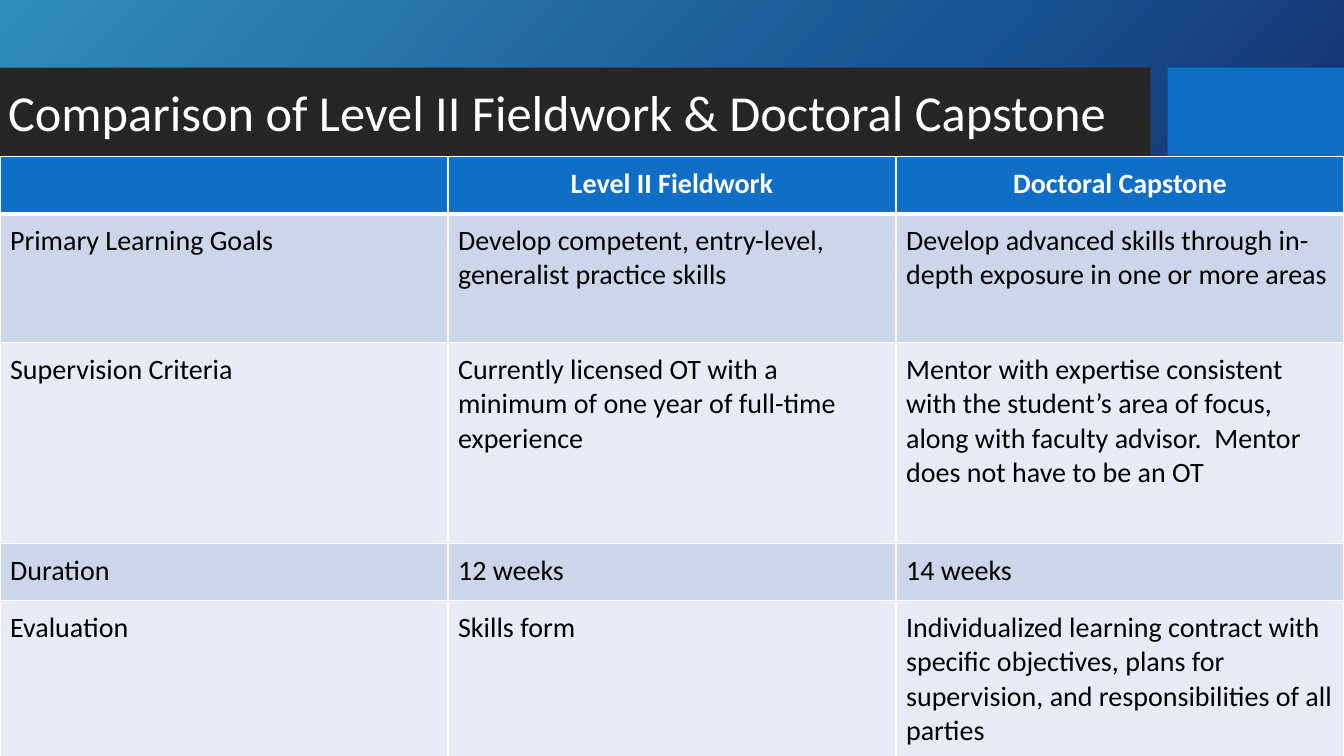
from copy import deepcopy

from lxml import etree
from pptx import Presentation
from pptx import util as u
from pptx.dml.color import RGBColor
from pptx.enum import shapes, text
from pptx.oxml import ns

WIDTH, HEIGHT = u.Inches(13.33), u.Inches(7.5)
FONT = "Calibri"
WHITE = RGBColor(0xFF, 0xFF, 0xFF)
BLACK = RGBColor(0, 0, 0)
CHARCOAL = RGBColor(0x26, 0x26, 0x26)
BLUE = RGBColor(0x0F, 0x6F, 0xC6)
BANDS = [RGBColor(0xCC, 0xD5, 0xEA), RGBColor(0xE7, 0xEB, 0xF5)]
BACKDROP = [RGBColor(0x31, 0x8C, 0xBC), RGBColor(0x18, 0x53, 0x93), RGBColor(0x13, 0x09, 0x49)]

TITLE = "Comparison of Level II Fieldwork & Doctoral Capstone"
ROWS = [
    ("", "Level II Fieldwork", "Doctoral Capstone"),
    ("Primary Learning Goals",
     "Develop competent, entry-level, generalist practice skills",
     "Develop advanced skills through in-depth exposure in one or more areas"),
    ("Supervision Criteria",
     "Currently licensed OT with a minimum of one year of full-time experience",
     "Mentor with expertise consistent with the student’s area of focus, "
     "along with faculty advisor.  Mentor does not have to be an OT"),
    ("Duration", "12 weeks", "14 weeks"),
    ("Evaluation", "Skills form",
     "Individualized learning contract with specific objectives, "
     "plans for supervision, and responsibilities of all parties"),
]
ROW_HEIGHTS = [0.57, 1.28, 1.99, 0.57, 1.63]


def style_text(p, size, color, bold=False):
    p.font.name, p.font.size, p.font.bold = FONT, u.Pt(size), bold
    p.font.color.rgb = color


def paint_background(s):
    fill = s.background.fill
    fill.gradient()
    fill.gradient_angle = 360 - 42
    stop_list = s.element.xpath(".//a:gsLst")[0]
    stop_list.insert(1, deepcopy(stop_list[0]))
    for i, (stop, color) in enumerate(zip(fill.gradient_stops, BACKDROP)):
        stop.color.rgb = color
        stop.position = i / (len(BACKDROP) - 1)


def add_bar(s, left, top, width, height, color):
    sp = s.shapes.add_shape(shapes.MSO_SHAPE.RECTANGLE, left, top, width, height)
    sp.shadow.inherit = False
    sp.fill.solid()
    sp.fill.fore_color.rgb = color
    sp.line.fill.background()


def add_title_band(s, top, height):
    """Dark title bar and blue end block, with the title placeholder over them."""
    accent_width = u.Inches(1.75)
    gap = u.Inches(0.17)
    add_bar(s, 0, top, WIDTH - accent_width - gap, height, CHARCOAL)
    add_bar(s, WIDTH - accent_width, top, accent_width, height, BLUE)

    title = s.shapes.title
    title.element.getparent().append(title.element)
    title.left, title.top = u.Inches(-0.02), top - u.Inches(0.3)
    title.width, title.height = u.Inches(11.5), u.Inches(1.55)
    tf = title.text_frame
    tf.text = TITLE
    tf.word_wrap = True
    tf.vertical_anchor = text.MSO_ANCHOR.MIDDLE
    p = tf.paragraphs[0]
    p.alignment = text.PP_ALIGN.LEFT
    p.line_spacing = 0.9
    style_text(p, 36, WHITE)


def set_borders(cell, top, bottom):
    """White cell borders; top and bottom widths in points, sides one point."""
    tcPr = cell._tc.get_or_add_tcPr()
    widths = {"a:lnL": 1, "a:lnR": 1, "a:lnT": top, "a:lnB": bottom}
    for i, (tag, width) in enumerate(widths.items()):
        ln = etree.Element(ns.qn(tag), w=str(u.Pt(width)))
        fill = etree.SubElement(ln, ns.qn("a:solidFill"))
        etree.SubElement(fill, ns.qn("a:srgbClr"), val=str(WHITE))
        tcPr.insert(i, ln)


def fill_cell(cell, value, row):
    header = row == 0
    cell.margin_left = cell.margin_right = u.Inches(0.1)
    cell.margin_top = cell.margin_bottom = u.Inches(0.1)
    cell.fill.solid()
    cell.fill.fore_color.rgb = BLUE if header else BANDS[(row - 1) % 2]
    set_borders(cell, top=3 if row == 1 else 1, bottom=3 if header else 1)
    cell.text = value
    p = cell.text_frame.paragraphs[0]
    p.alignment = text.PP_ALIGN.CENTER if header else text.PP_ALIGN.LEFT
    style_text(p, 20, WHITE if header else BLACK, bold=header)


def add_comparison_table(s, left, top, width):
    columns = len(ROWS[0])
    height = u.Inches(sum(ROW_HEIGHTS))
    table = s.shapes.add_table(len(ROWS), columns, left, top, width, height).table
    for column in table.columns:
        column.width = width // columns
    for r, values in enumerate(ROWS):
        table.rows[r].height = u.Inches(ROW_HEIGHTS[r])
        for c, value in enumerate(values):
            fill_cell(table.cell(r, c), value, r)


def main():
    prs = Presentation()
    prs.slide_width, prs.slide_height = WIDTH, HEIGHT
    s = prs.slides.add_slide(prs.slide_layouts[5])
    paint_background(s)
    add_title_band(s, u.Inches(0.67), u.Inches(1.5))
    add_comparison_table(s, 0, u.Inches(1.55), WIDTH)
    prs.save("out.pptx")


if __name__ == "__main__":
    main()
